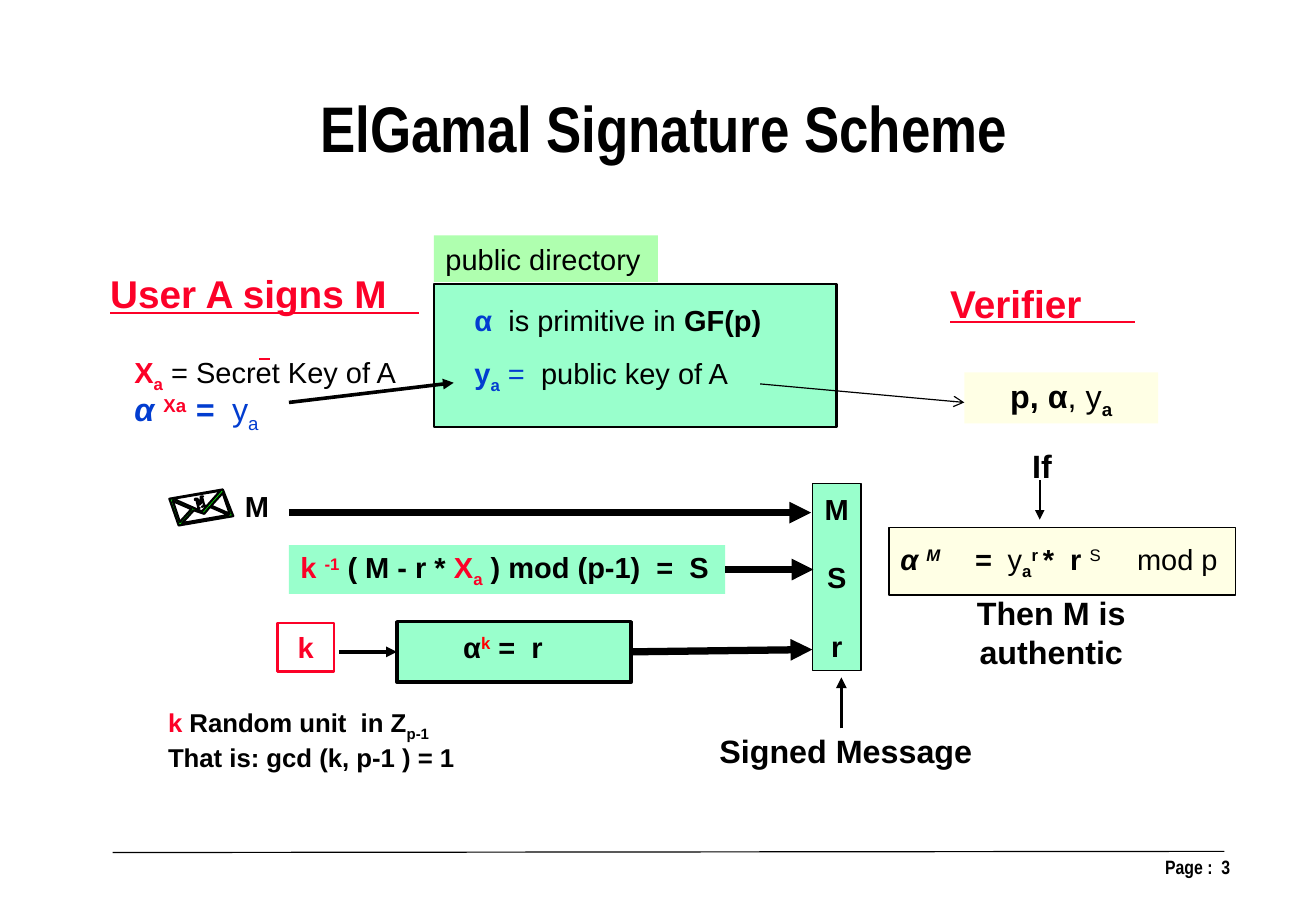
from lxml import etree
from pptx import Presentation
from pptx.dml.color import RGBColor
from pptx.enum.shapes import MSO_CONNECTOR, MSO_SHAPE
from pptx.enum.text import MSO_ANCHOR, PP_ALIGN
from pptx.oxml.ns import qn
from pptx.util import Inches, Pt

RECTANGLE = MSO_SHAPE.RECTANGLE
STRAIGHT = MSO_CONNECTOR.STRAIGHT
TOP, MIDDLE = MSO_ANCHOR.TOP, MSO_ANCHOR.MIDDLE
LEFT, CENTER, RIGHT = PP_ALIGN.LEFT, PP_ALIGN.CENTER, PP_ALIGN.RIGHT
LEFT_SIDE, RIGHT_SIDE = 1, 3

BLACK = RGBColor(0, 0, 0)
WHITE = RGBColor(255, 255, 255)
RED = RGBColor(0xFC, 0x01, 0x28)
PURE_RED = RGBColor(255, 0, 0)
BLUE = RGBColor(0x02, 0x3D, 0xD0)
MINT = RGBColor(0x99, 0xFF, 0xCC)
LIGHT_GREEN = RGBColor(0xAF, 0xFF, 0xAF)
GREEN = RGBColor(0, 255, 0)
CREAM = RGBColor(0xFF, 0xFF, 0xE5)

# Run: text, colour, marks (b bold, i italic, u underline, + raised, - lowered)
# Boxes: name -> (left, top, width, height), fill, line colour, line width
BOXES = {
    "check": ((7.66, 4.55, 2.99, 0.58), CREAM, BLACK, 0.75),
    "directory": ((3.74, 2.45, 3.47, 1.23), MINT, BLACK, 1.5),
    "directory label": ((3.74, 2.03, 1.93, 0.4), LIGHT_GREEN, None, 0),
    "nonce": ((2.39, 5.37, 0.49, 0.42), WHITE, RED, 1.5),
    "nonce rule": ((1.35, 6.06, 3.06, 0.64), WHITE, None, 0),
    "signature": ((2.49, 4.7, 3.76, 0.42), MINT, None, 0),
    "commitment": ((3.42, 5.36, 2.02, 0.52), MINT, BLACK, 2.25),
    "signed message": ((7, 4.17, 0.42, 1.61), MINT, BLACK, 0.75),
    "parameters": ((8.31, 3.21, 1.67, 0.44), CREAM, None, 0),
}

# Text inside boxes: name -> size, alignment, space before, paragraphs
BOX_TEXTS = {
    "check": (18, LEFT, 0, [[
        ("α ", BLACK, "bi"), ("M", BLACK, "bi+"), ("\t=  ", BLACK, "bi"),
        ("y", BLACK, ""), ("a", BLACK, "b-"), ("r ", BLACK, "b+"),
        ("*  r ", BLACK, "b"), ("S", BLACK, "+"), ("\tmod p", BLACK, "")]]),
    "directory label": (18, LEFT, 0, [[("public directory", BLACK, "")]]),
    "nonce": (18, CENTER, 0, [[("k", RED, "b")]]),
    "nonce rule": (16, LEFT, 0, [
        [("k", RED, "b"), (" Random unit  in Z", BLACK, "b"), ("p-1", BLACK, "b-")],
        [("That is: gcd (k, p-1 ) = 1", BLACK, "b")]]),
    "signature": (18, LEFT, 0, [[
        ("k ", RED, "b"), ("-1", RED, "b+"), (" ( M - r * ", BLACK, "b"),
        ("X", RED, "b"), ("a", RED, "b-"), (" ) mod (p-1)  =  S", BLACK, "b")]]),
    "signed message": (18, CENTER, 21, [[(part, BLACK, "b")] for part in "MSr"]),
    "parameters": (20, CENTER, 0, [[
        ("p, α", BLACK, "b"), (", y", BLACK, ""), ("a", BLACK, "b-")]]),
}
CHECK_TABS = (0.64, 2.04)

# Free texts: place, font, size, alignment, anchor, space before, paragraphs
FREE_TEXTS = [
    ((2.2, 0.71, 7.04, 0.77), "Arial Narrow", 40, CENTER, TOP, 0,
     [[("ElGamal Signature Scheme", BLACK, "b")]]),
    ((8.14, 7.32, 2.56, 0.3), "Arial Narrow", 12, RIGHT, TOP, 0,
     [[("Page :  3", BLACK, "b")]]),
    ((0.82, 2.28, 2.92, 0.5), "Arial", 24, CENTER, TOP, 0,
     [[("User A signs M     ", RED, "bu")]]),
    ((8.07, 2.36, 1.83, 0.5), "Arial", 24, CENTER, TOP, 0,
     [[("Verifier     ", RED, "bu")]]),
    ((1.06, 2.7, 2.5, 1.05), "Arial", 18, LEFT, MIDDLE, 0,
     [[("X", RED, "b"), ("a", RED, "b-"), (" = Secret Key of A", BLACK, "")]]),
    ((3.99, 2.55, 3, 0.41), "Arial", 18, LEFT, MIDDLE, 0,
     [[("α", BLUE, "b"), ("  is primitive in ", BLACK, ""), ("GF(p)", BLACK, "b")]]),
    ((3.99, 3.03, 3, 0.41), "Arial", 18, LEFT, MIDDLE, 0,
     [[("y", BLUE, "b"), ("a", BLUE, "b-"), (" = ", BLUE, ""),
       (" public key of A", BLACK, "")]]),
    ((1.06, 3.33, 2.5, 0.44), "Arial", 20, LEFT, MIDDLE, 0,
     [[("α ", BLUE, "bi"), ("Xa", RED, "b+"), (" =  ", BLUE, "bi"),
       ("y", BLUE, ""), ("a", BLUE, "-")]]),
    ((2.01, 4.16, 0.41, 0.41), "Arial", 18, CENTER, MIDDLE, 0, [[("M", BLACK, "b")]]),
    ((3.25, 5.37, 2.17, 0.41), "Arial", 18, CENTER, MIDDLE, 0,
     [[("α", BLACK, "b"), ("k", PURE_RED, "b+"), (" =  r", BLACK, "b")]]),
    ((5.96, 6.26, 2.66, 0.43), "Arial", 20, CENTER, MIDDLE, 0,
     [[("Signed Message", BLACK, "b")]]),
    ((8.73, 3.79, 0.5, 0.44), "Arial", 20, CENTER, MIDDLE, 0, [[("If", BLACK, "b")]]),
    ((8.11, 5.06, 1.9, 0.78), "Arial", 20, CENTER, MIDDLE, 0,
     [[("Then M is authentic", BLACK, "b")]]),
]

# Lines: start, end, width, head, box at the start, box at the end
LINES = [
    ((0.97, 7.35), (10.55, 7.34), 0.75, None, None, None),
    ((2.49, 4.42), (6.99, 4.42), 4.5, "triangle", None, None),
    ((6.25, 4.91), (7.01, 4.91), 4.5, "triangle", "signature", None),
    ((5.44, 5.62), (7, 5.6), 4.5, "triangle", "commitment", None),
    ((2.92, 5.62), (3.42, 5.62), 2.25, "triangle", None, "commitment"),
    ((2.49, 3.47), (3.91, 3.3), 2.25, "triangle", None, None),
    ((7.25, 6.28), (7.25, 5.84), 2.25, "triangle", None, None),
    ((8.96, 4.14), (8.96, 4.48), 1.5, "triangle", None, None),
    ((6.55, 3.31), (8.31, 3.47), 0.75, "arrow", None, None),
]

# Envelope: outer edge, then the four folds, then the letter on it
ENVELOPE = [
    [(1.46, 4.3), (1.92, 4.22), (2.01, 4.45), (1.54, 4.53)],
    [(1.49, 4.3), (1.74, 4.41), (1.9, 4.23)],
    [(1.49, 4.32), (1.55, 4.5), (1.65, 4.39)],
    [(1.92, 4.25), (1.82, 4.36), (1.98, 4.43)],
    [(1.67, 4.4), (1.57, 4.51), (1.97, 4.44), (1.81, 4.37), (1.76, 4.43)],
]
ENVELOPE_LETTER = [
    (1.73, 4.34), (1.72, 4.35), (1.7, 4.3), (1.71, 4.38), (1.72, 4.38),
    (1.7, 4.39), (1.71, 4.38), (1.69, 4.3), (1.68, 4.31), (1.68, 4.3),
    (1.7, 4.3), (1.73, 4.34), (1.73, 4.28), (1.75, 4.28), (1.74, 4.28),
    (1.76, 4.36), (1.77, 4.36), (1.74, 4.37), (1.76, 4.36), (1.74, 4.29)]


def inches(values):
    return [Inches(value) for value in values]


def paint(shape, fill, line, width):
    shape.shadow.inherit = False
    if fill is None:
        shape.fill.background()
    else:
        shape.fill.solid()
        shape.fill.fore_color.rgb = fill
    if line is None:
        shape.line.fill.background()
    else:
        shape.line.color.rgb = line
        shape.line.width = Pt(width)


def write(shape, font_name, size, alignment, anchor, space_before, paragraphs):
    frame = shape.text_frame
    frame.word_wrap = True
    frame.vertical_anchor = anchor
    for index, runs in enumerate(paragraphs):
        paragraph = frame.add_paragraph() if index else frame.paragraphs[0]
        paragraph.alignment = alignment
        paragraph.space_before = Pt(space_before if index else 0)
        for text, color, marks in runs:
            run = paragraph.add_run()
            run.text = text
            formats = {"name": font_name, "size": Pt(size), "bold": "b" in marks,
                       "italic": "i" in marks, "underline": "u" in marks}
            for name, value in formats.items():
                setattr(run.font, name, value)
            run.font.color.rgb = color
            for mark, baseline in (("+", "30000"), ("-", "-25000")):
                if mark in marks:
                    run._r.get_or_add_rPr().set("baseline", baseline)


def draw_outline(shapes, contours, fill, line, width):
    builder = None
    for contour in contours:
        start, *rest = [inches(point) for point in contour]
        if builder is None:
            builder = shapes.build_freeform(*start)
        else:
            builder.move_to(*start)
        builder.add_line_segments(rest, close=True)
    paint(builder.convert_to_shape(), fill, line, width)


def main():
    presentation = Presentation()
    presentation.slide_width, presentation.slide_height = inches((11.34, 7.88))
    slide = presentation.slides.add_slide(presentation.slide_layouts[6])
    shapes = slide.shapes

    # Boxes and their text
    boxes = {}
    for name, (place, fill, line, width) in BOXES.items():
        boxes[name] = shapes.add_shape(RECTANGLE, *inches(place))
        paint(boxes[name], fill, line, width)
    for name, (size, alignment, space, paragraphs) in BOX_TEXTS.items():
        write(boxes[name], "Arial", size, alignment, MIDDLE, space, paragraphs)
    properties = boxes["check"].text_frame.paragraphs[0]._p.get_or_add_pPr()
    tabs = etree.SubElement(properties, qn("a:tabLst"))
    for position in CHECK_TABS:
        etree.SubElement(tabs, qn("a:tab"), pos=str(Inches(position)), algn="l")

    # Free texts
    for place, *text in FREE_TEXTS:
        write(shapes.add_textbox(*inches(place)), *text)

    # Envelope
    draw_outline(shapes, ENVELOPE, GREEN, None, 0)
    for contour in ENVELOPE + [ENVELOPE_LETTER]:
        draw_outline(shapes, [contour], None, BLACK, 1.38)

    # Lines and arrows
    for start, end, width, head, start_box, end_box in LINES:
        connector = shapes.add_connector(STRAIGHT, *inches(start + end))
        if start_box:
            connector.begin_connect(boxes[start_box], RIGHT_SIDE)
        if end_box:
            connector.end_connect(boxes[end_box], LEFT_SIDE)
        connector.line.color.rgb = BLACK
        connector.line.width = Pt(width)
        if head:
            etree.SubElement(connector.line._get_or_add_ln(), qn("a:tailEnd"), type=head)
        etree.SubElement(connector._element.spPr, qn("a:effectLst"))

    presentation.save("out.pptx")


if __name__ == "__main__":
    main()
